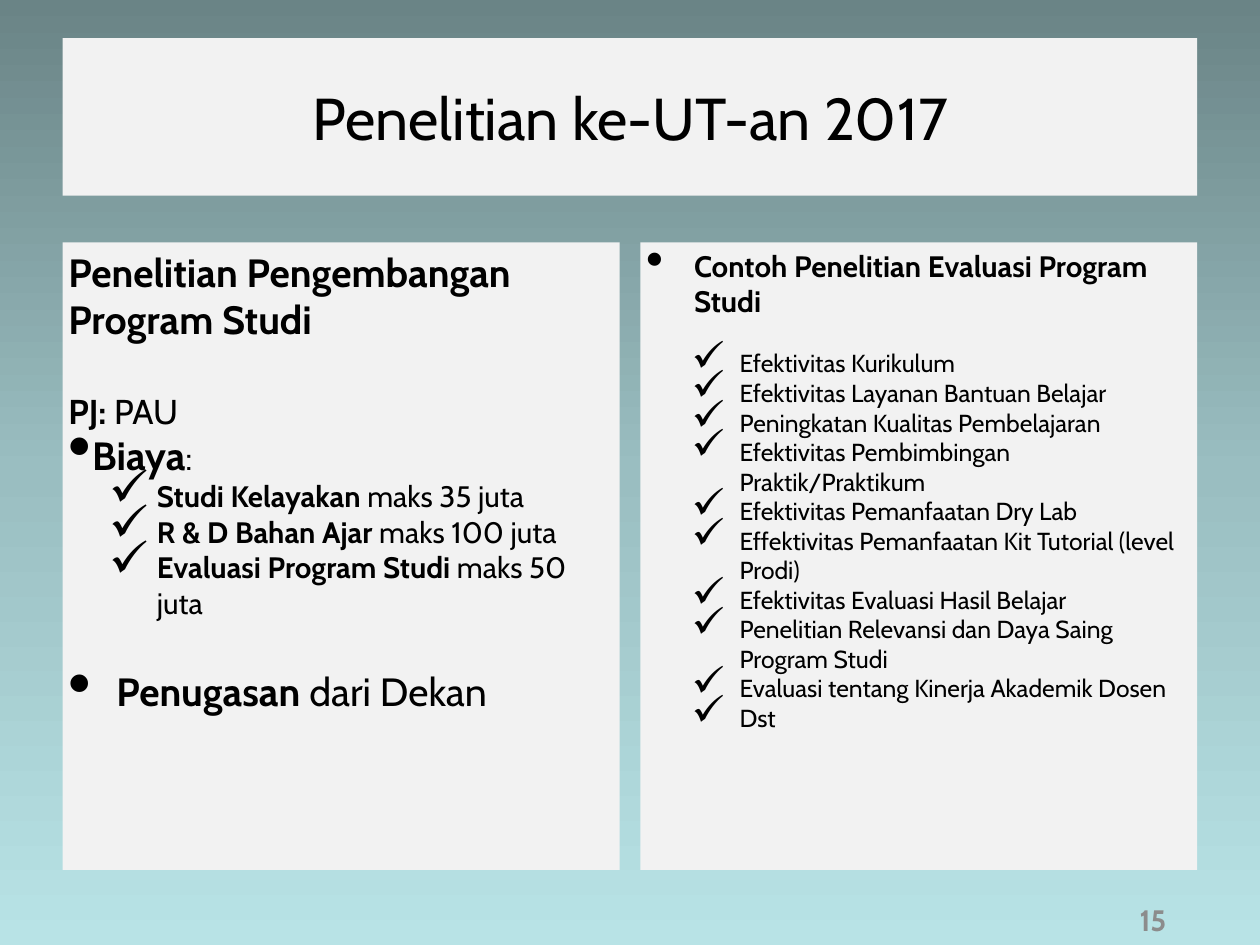
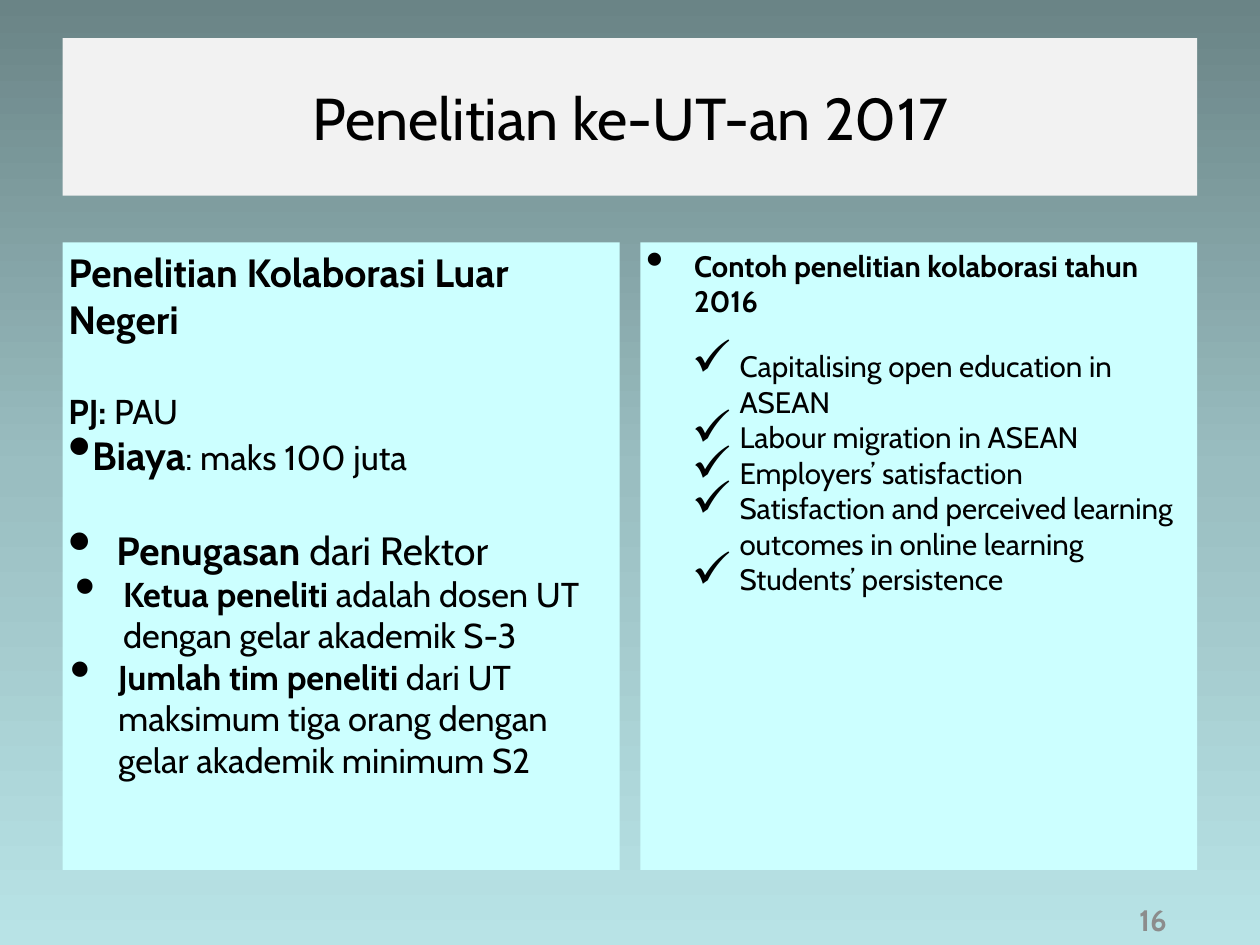
from copy import deepcopy
from dataclasses import dataclass

from lxml import etree
from pptx import Presentation
from pptx.dml.color import RGBColor
from pptx.enum import shapes, text
from pptx.oxml import ns
from pptx.util import Pt

COLORS = {
    "sky_top": "6A8486", "sky_middle": "9ABEC1", "sky_bottom": "B8E3E6",
    "gray": "F2F2F2", "aqua": "CCFFFF", "ink": "000000", "number": "8C8C8C",
}
FONT = "Cabin"
WIDTH, HEIGHT = 1024, 768
MARGIN, GUTTER, INSET = 51, 17, 4.5
PANEL_WIDTH = (WIDTH - 2 * MARGIN - GUTTER) / 2
HANG = 39
DOT, TICK = "•", "✓"


@dataclass
class Line:
    """A paragraph with a bold start and a regular rest; lengths in points."""
    bold: str
    plain: str = ""
    size: float = 32
    plain_size: float = 0
    bullet: str = ""
    left: float = 0
    before: float = 0


class Deck:
    def __init__(self):
        self.prs = Presentation()
        self.prs.slide_width, self.prs.slide_height = Pt(WIDTH), Pt(HEIGHT)
        self.slide = None

    def new_slide(self, title, number):
        self.slide = self.prs.slides.add_slide(self.prs.slide_layouts[6])
        self.background()
        self.title(title)
        self.number(number)

    def background(self):
        fill = self.slide.background.fill
        fill.gradient()
        fill.gradient_angle = 270
        last_stop = self.slide.element.xpath(".//a:gs")[-1]
        last_stop.addnext(deepcopy(last_stop))
        names = ("sky_top", "sky_middle", "sky_bottom")
        for stop, name, position in zip(fill.gradient_stops, names, (0, 0.5, 1)):
            stop.color.rgb = RGBColor.from_string(COLORS[name])
            stop.position = position

    def panel(self, left, top, width, height, color, anchor):
        """Add a filled rectangle and return its text frame."""
        panel = self.slide.shapes.add_shape(
            shapes.MSO_SHAPE.RECTANGLE, Pt(left), Pt(top), Pt(width), Pt(height))
        panel.shadow.inherit = False
        panel.fill.solid()
        panel.fill.fore_color.rgb = RGBColor.from_string(COLORS[color])
        panel.line.fill.background()
        frame = panel.text_frame
        frame.word_wrap = True
        frame.vertical_anchor = anchor
        frame.margin_left = frame.margin_right = Pt(INSET)
        frame.margin_top = frame.margin_bottom = Pt(INSET)
        return frame

    def style(self, run, size, color="ink", bold=False):
        run.font.name = FONT
        run.font.size = Pt(size)
        run.font.bold = bold
        run.font.color.rgb = RGBColor.from_string(COLORS[color])

    def centred(self, frame, wording, size, color="ink", bold=False):
        frame.text = wording
        paragraph = frame.paragraphs[0]
        paragraph.alignment = text.PP_ALIGN.CENTER
        self.style(paragraph.runs[0], size, color, bold)

    def title(self, wording):
        frame = self.panel(MARGIN, 31, WIDTH - 2 * MARGIN, 128, "gray",
                           text.MSO_ANCHOR.MIDDLE)
        self.centred(frame, wording, 48)

    def number(self, number):
        box = self.slide.shapes.add_textbox(Pt(887), Pt(727), Pt(100), Pt(41))
        box.text_frame.word_wrap = True
        box.text_frame.vertical_anchor = text.MSO_ANCHOR.MIDDLE
        self.centred(box.text_frame, str(number), 24, "number", True)

    def bullet(self, paragraph, line):
        properties = paragraph._p.get_or_add_pPr()
        properties.set("marL", str(Pt(line.left)))
        properties.set("indent", str(-Pt(HANG)))
        etree.SubElement(properties, ns.qn("a:buSzPct")).set("val", "171000")
        etree.SubElement(properties, ns.qn("a:buChar")).set("char", line.bullet)

    def column(self, index, color, lines):
        """Fill the left (0) or right (1) panel with lines."""
        frame = self.panel(MARGIN + index * (PANEL_WIDTH + GUTTER), 197,
                           PANEL_WIDTH, 510, color, text.MSO_ANCHOR.TOP)
        for position, line in enumerate(lines):
            paragraph = frame.add_paragraph() if position else frame.paragraphs[0]
            if line.bullet:
                self.bullet(paragraph, line)
            paragraph.alignment = text.PP_ALIGN.LEFT
            if line.before:
                paragraph.space_before = Pt(line.before)
            parts = ((line.bold, line.size, True),
                     (line.plain, line.plain_size or line.size, False))
            for wording, size, bold in parts:
                if wording:
                    run = paragraph.add_run()
                    run.text = wording
                    self.style(run, size, bold=bold)


def scheme(heading, cost):
    """Opening lines of every left panel."""
    return [Line(heading), Line("PJ: ", "PAU", 28, before=38.5),
            Line("Biaya", cost, 32, 28, DOT)]


def assignment(person):
    return Line("Penugasan ", f"dari {person}", bullet=DOT, left=HANG, before=38.5)


def examples(heading, size, topics):
    ticks = [Line("", topic, size, bullet=TICK, left=76) for topic in topics]
    ticks[0].before = 24
    return [Line(heading, size=24, bullet=DOT, left=HANG)] + ticks


def main():
    deck = Deck()
    title = "Penelitian ke-UT-an 2017"

    deck.new_slide(title, 15)
    costs = [("Studi Kelayakan ", "maks 35 juta"),
             ("R & D Bahan Ajar ", "maks 100 juta"),
             ("Evaluasi Program Studi ", "maks 50 juta")]
    deck.column(0, "gray", [
        *scheme("Penelitian Pengembangan Program Studi", ":"),
        *(Line(work, limit, 24, bullet=TICK, left=72) for work, limit in costs),
        assignment("Dekan"),
    ])
    deck.column(1, "gray", examples("Contoh Penelitian Evaluasi Program Studi", 20, [
        "Efektivitas Kurikulum",
        "Efektivitas Layanan Bantuan Belajar",
        "Peningkatan Kualitas Pembelajaran",
        "Efektivitas Pembimbingan Praktik/Praktikum",
        "Efektivitas Pemanfaatan Dry Lab",
        "Effektivitas Pemanfaatan Kit Tutorial (level Prodi)",
        "Efektivitas Evaluasi Hasil Belajar",
        "Penelitian Relevansi dan Daya Saing Program Studi",
        "Evaluasi tentang Kinerja Akademik Dosen",
        "Dst",
    ]))

    deck.new_slide(title, 16)
    deck.column(0, "aqua", [
        *scheme("Penelitian Kolaborasi Luar Negeri", ": maks 100 juta"),
        assignment("Rektor"),
        Line("Ketua peneliti ", "adalah dosen UT dengan gelar akademik S-3",
             28, bullet=DOT, left=44.5),
        Line("Jumlah tim peneliti ",
             "dari UT maksimum tiga orang dengan gelar akademik minimum S2",
             28, bullet=DOT, left=40.5),
    ])
    deck.column(1, "aqua", examples("Contoh penelitian kolaborasi tahun 2016", 24, [
        "Capitalising open education in ASEAN",
        "Labour migration in ASEAN",
        "Employers’ satisfaction",
        "Satisfaction and perceived learning outcomes in online learning",
        "Students’ persistence",
    ]))

    deck.prs.save("out.pptx")


if __name__ == "__main__":
    main()
